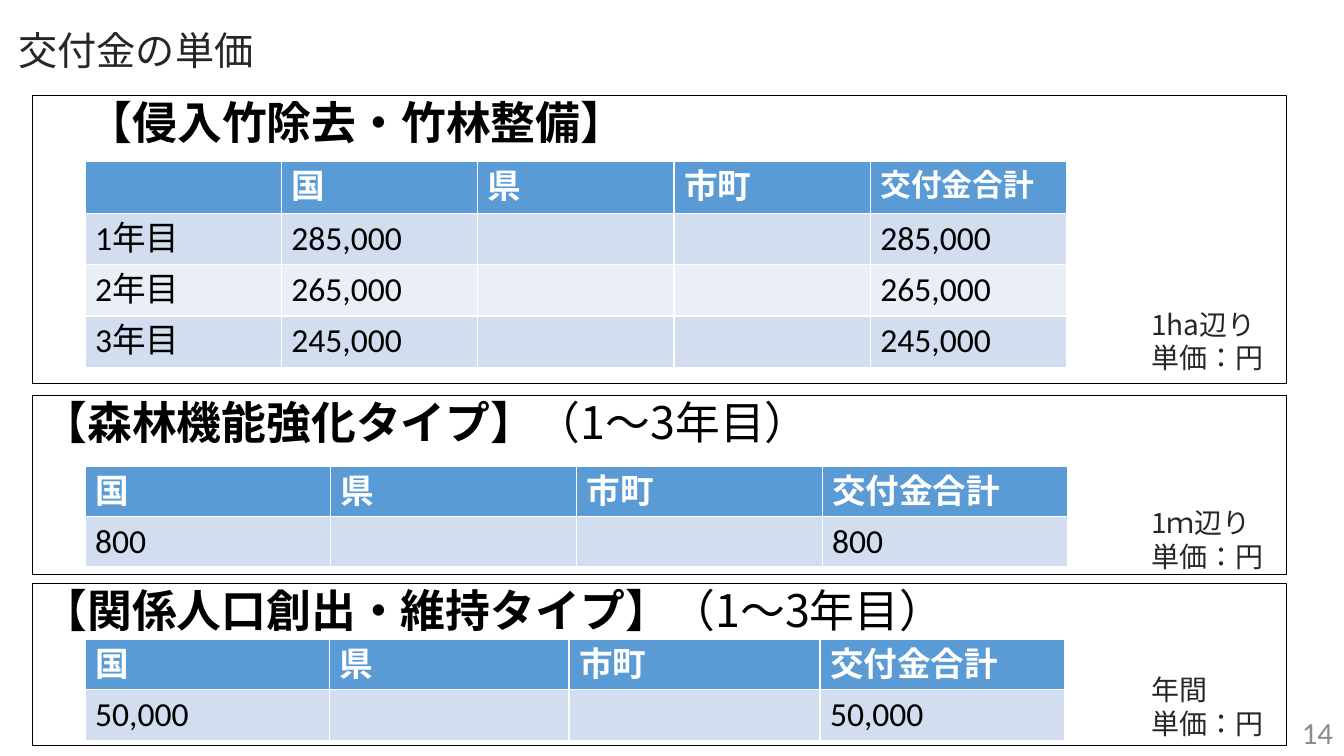
from pptx import Presentation
from pptx.dml.color import RGBColor
from pptx.enum.lang import MSO_LANGUAGE_ID as Lang
from pptx.enum.shapes import MSO_SHAPE as Shape
from pptx.enum.text import MSO_ANCHOR as Anchor, PP_ALIGN as Align
from pptx.oxml.ns import qn
from pptx.util import Pt
from lxml.etree import SubElement

PX = 9525
NOTO = "Noto Sans CJK JP"
INK = "262626"
BLACK = "000000"
WHITE = "FFFFFF"
HEADER = "5B9BD5"
BANDS = ["D2DEEF", "EAEFF7"]


def px(*lengths):
    return [n * PX for n in lengths]


def rgb(color):
    return RGBColor.from_string(color)


def style_run(r, size, color, font=NOTO, bold=False):
    f = r.font
    f.size = Pt(size)
    f.bold = bold
    f.name = font
    f.color.rgb = rgb(color)
    f.language_id = Lang.JAPANESE
    SubElement(r._r.get_or_add_rPr(), qn("a:ea"), typeface=font)


def style_text(tf, *style):
    for p in tf.paragraphs:
        for r in p.runs:
            style_run(r, *style)


def add_title(s, text, box):
    sp = s.shapes.title
    sp.left, sp.top, sp.width, sp.height = px(*box)
    tf = sp.text_frame
    tf.text = text
    tf.vertical_anchor = Anchor.TOP
    tf.paragraphs[0].alignment = Align.LEFT
    style_text(tf, 28, INK)


def add_panel(s, top, height, name, years="", font=NOTO, indent=0):
    sp = s.shapes.add_shape(Shape.RECTANGLE, *px(31, top, 1194, height))
    sp.shadow.inherit = False
    sp.fill.background()
    sp.line.color.rgb = rgb(BLACK)
    sp.line.width = Pt(0.75)
    tf = sp.text_frame
    tf.vertical_anchor = Anchor.TOP
    p = tf.paragraphs[0]
    p.alignment = Align.LEFT
    p.line_spacing = 0.9
    p._p.get_or_add_pPr().set("marL", str(indent * PX))
    for text, bold in [(name, True), (years, False)]:
        if text:
            r = p.add_run()
            r.text = text
            style_run(r, 32, BLACK, font, bold)


def add_price_table(s, top, widths, row_height, rows, total_size=24):
    box = px(81, top, sum(widths), row_height * len(rows))
    table = s.shapes.add_table(len(rows), len(widths), *box).table
    for column, width in zip(table.columns, widths):
        column.width = width * PX
    for i, row in enumerate(rows):
        for j, text in enumerate(row):
            cell = table.cell(i, j)
            cell.margin_bottom = 0
            cell.fill.solid()
            cell.fill.fore_color.rgb = rgb(BANDS[(i - 1) % 2] if i else HEADER)
            cell.text = text
            size = total_size if i == 0 and j == len(row) - 1 else 24
            style_text(cell.text_frame, size, BLACK if i else WHITE, "Calibri", i == 0)


def add_text(s, box, text, size, color, font=NOTO, align=Align.LEFT, anchor=Anchor.TOP):
    tf = s.shapes.add_textbox(*px(*box)).text_frame
    tf.word_wrap = True
    tf.vertical_anchor = anchor
    tf.text = text
    for p in tf.paragraphs:
        p.alignment = align
    style_text(tf, size, color, font)


def main():
    prs = Presentation()
    prs.slide_width, prs.slide_height = px(1280, 720)
    s = prs.slides.add_slide(prs.slide_layouts[5])
    add_title(s, "交付金の単価", (8, 20, 1272, 55))

    payers = ["国", "県", "市町", "交付金合計"]
    years = "（1～3年目）"
    add_panel(s, 91, 274, "【侵入竹除去・竹林整備】", font="Arial", indent=43)
    add_panel(s, 377, 170, "【森林機能強化タイプ】", years)
    add_panel(s, 556, 154, "【関係人口創出・維持タイプ】", years)

    yearly = [("1年目", "285,000"), ("2年目", "265,000"), ("3年目", "245,000")]
    rows = [["", *payers]] + [[year, n, "", "", n] for year, n in yearly]
    add_price_table(s, 154, [187] * 5, 49, rows, total_size=22)
    add_price_table(s, 444, [234] * 4, 48, [payers, ["800", "", "", "800"]])
    add_price_table(s, 609, [233, 228, 239, 233], 48,
                    [payers, ["50,000", "", "", "50,000"]])

    for top, basis in [(288, "1ha辺り"), (477, "1ｍ辺り"), (636, "年間")]:
        add_text(s, (1087, top, 139, 74), basis + "\n単価：円", 20, INK)
    add_text(s, (991, 678, 288, 38), "14", 22, "8C8C8C", "Calibri",
             Align.RIGHT, Anchor.MIDDLE)
    prs.save("out.pptx")


if __name__ == "__main__":
    main()
